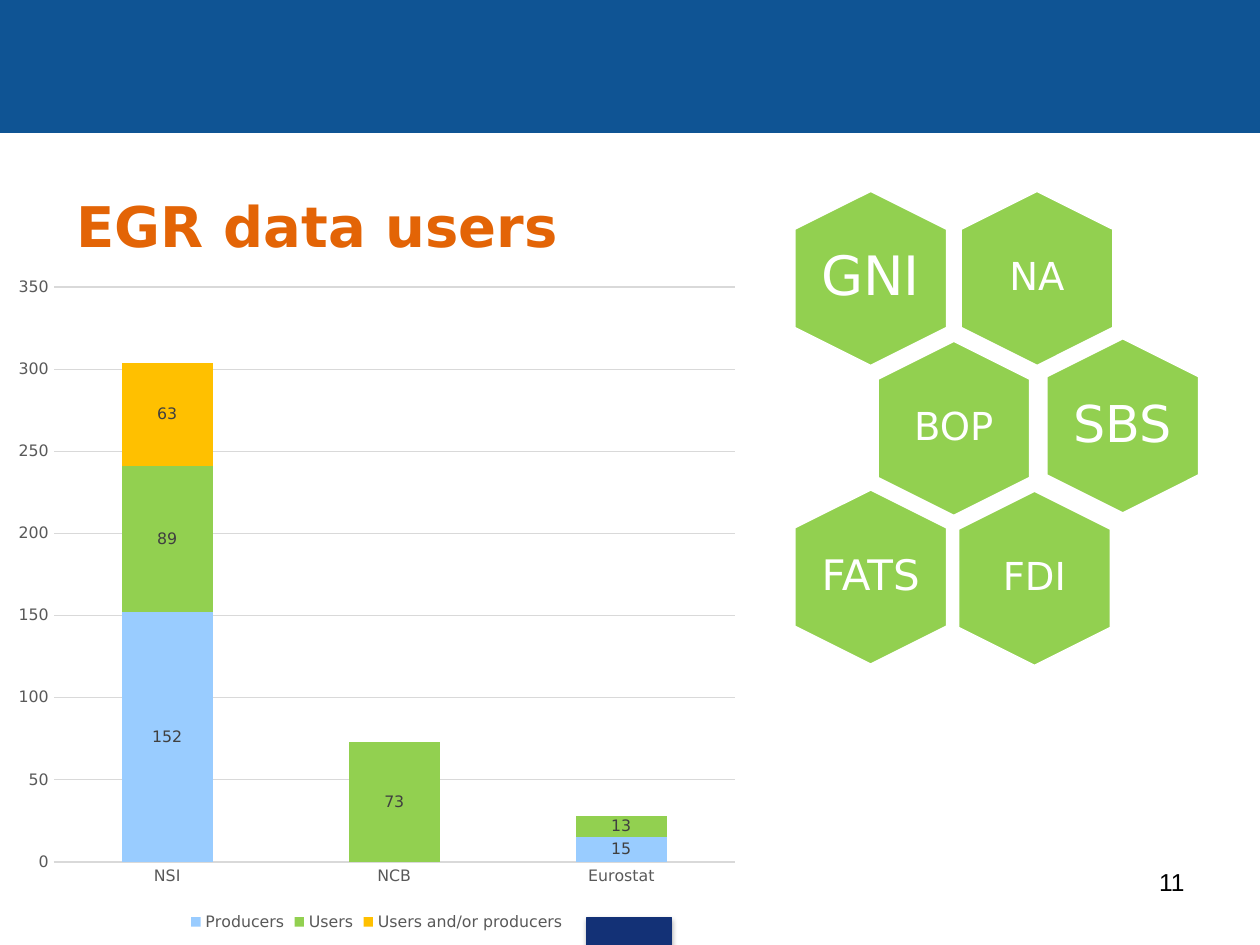
from pptx import Presentation
from pptx.chart.data import CategoryChartData
from pptx.dml.color import RGBColor
from pptx.enum.chart import (XL_CHART_TYPE, XL_LABEL_POSITION,
                             XL_LEGEND_POSITION, XL_TICK_MARK)
from pptx.enum.shapes import MSO_SHAPE
from pptx.enum.text import MSO_ANCHOR, PP_ALIGN
from pptx.oxml import parse_xml
from pptx.oxml.ns import nsdecls
from pptx.util import Inches, Pt

# Content
TITLE = "EGR data users"
PAGE = "11"
CATS = ["NSI", "NCB", "Eurostat"]
SERIES = [
    ("Producers", [152, None, 15], "sky"),
    ("Users", [89, 73, 13], "green"),
    ("Users and/or producers", [63, None, None], "gold"),
]
# Text, size, column, row, small nudge in inches
CELLS = [
    ("NA", 22, 1, 0, (0, 0)),
    ("GNI", 31, 0, 0, (0, 0)),
    ("BOP", 22, 0.5, 1, (0, 0)),
    ("SBS", 29, 1.5, 1, (0.02, -0.02)),
    ("FDI", 22, 1, 2, (-0.02, 0)),
    ("FATS", 24, 0, 2, (0, -0.01)),
]
HEX = {"left": 6.21, "top": 1.6, "dx": 1.32, "dy": 1.19, "w": 1.4, "h": 1.22}
LABEL = (0.84, 0.96)

COLORS = {
    "band": "0F5494", "navy": "133176", "orange": "E36406",
    "sky": "99CCFF", "green": "92D050", "gold": "FFC000",
    "grid": "D9D9D9", "gray": "595959", "dark": "404040",
    "white": "FFFFFF", "black": "000000",
}
FONT = "DejaVu Sans"
WIDE, HIGH = 10, 7.5


def rgb(name):
    return RGBColor.from_string(COLORS[name])


def style(font, size, color, face=FONT, bold=False):
    font.size, font.name, font.bold = Pt(size), face, bold
    font.color.rgb = rgb(color)


def rule(line, color, width=0.75):
    line.color.rgb = rgb(color)
    line.width = Pt(width)


def shape(home, kind, box, fill, edge, width=0.75):
    item = home.add_shape(kind, *map(Inches, box))
    item.shadow.inherit = False
    item.fill.solid()
    item.fill.fore_color.rgb = rgb(fill)
    rule(item.line, edge, width)
    return item


def write(home, box, text, size, color, face=FONT, bold=False,
          align=PP_ALIGN.LEFT, anchor=MSO_ANCHOR.MIDDLE,
          inset=(0.1, 0.05), space=None, indent=0):
    frame = home.add_textbox(*map(Inches, box)).text_frame
    frame.word_wrap = True
    frame.vertical_anchor = anchor
    frame.margin_left = frame.margin_right = Inches(inset[0])
    frame.margin_top = frame.margin_bottom = Inches(inset[1])
    para = frame.paragraphs[0]
    para.alignment, para.line_spacing = align, space
    if indent:
        para._p.get_or_add_pPr().set("marL", str(Inches(indent)))
    run = para.add_run()
    run.text = text
    style(run.font, size, color, face, bold)


deck = Presentation()
deck.slide_width, deck.slide_height = Inches(WIDE), Inches(HIGH)
slide = deck.slides.add_slide(deck.slide_layouts[6])
parts = slide.shapes

# Top band and foot tab
shape(parts, MSO_SHAPE.RECTANGLE, (0, 0, WIDE, 0.14 * HIGH), "band", "band")
tab = shape(parts, MSO_SHAPE.RECTANGLE, (4.66, 7.28, 0.67, 0.22), "navy", "navy")
glow = tab._element.spPr.find("{*}effectLst")
glow.append(parse_xml(
    f'<a:outerShdw {nsdecls("a")} blurRad="{Pt(3.1)}" dist="{Pt(1.8)}" '
    'dir="5400000" rotWithShape="0"><a:srgbClr val="000000">'
    '<a:alpha val="35000"/></a:srgbClr></a:outerShdw>'))

# Title and page number
write(parts, (0.12, 1.31, 9.76, 1.02), TITLE, 32, "orange", bold=True,
      space=0.9, indent=0.39)
write(parts, (7.17, 6.83, 2.33, 0.52), PAGE, 14, "black", face="Arial",
      align=PP_ALIGN.RIGHT, anchor=MSO_ANCHOR.TOP)

# Stacked columns
data = CategoryChartData()
data.categories = CATS
for name, vals, _ in SERIES:
    data.add_series(name, vals)
chart = parts.add_chart(XL_CHART_TYPE.COLUMN_STACKED,
                        *map(Inches, (0.03, 2.1, 5.92, 5.33)), data).chart
style(chart.font, 10, "black")
chart.has_title = False
chart.has_legend = True
chart.legend.position = XL_LEGEND_POSITION.BOTTOM
chart.legend.include_in_layout = False
style(chart.legend.font, 9, "gray")

cat, val = chart.category_axis, chart.value_axis
for axis in (cat, val):
    axis.major_tick_mark = axis.minor_tick_mark = XL_TICK_MARK.NONE
    style(axis.tick_labels.font, 9, "gray")
rule(cat.format.line, "grid")
val.format.line.fill.background()
val.minimum_scale, val.maximum_scale, val.major_unit = 0, 350, 50
rule(val.major_gridlines.format.line, "grid")

plot = chart.plots[0]
plot.gap_width, plot.overlap, plot.vary_by_categories = 150, 100, False
for bar, (_, _, color) in zip(plot.series, SERIES):
    bar.format.fill.solid()
    bar.format.fill.fore_color.rgb = rgb(color)
    tags = bar.data_labels
    tags.show_value = True
    tags.position = XL_LABEL_POSITION.CENTER
    style(tags.font, 9, "dark")

# Honeycomb of statistics
comb = parts.add_group_shape().shapes
wide, high = HEX["w"], HEX["h"]
for text, size, col, row, (nx, ny) in CELLS:
    x = HEX["left"] + col * HEX["dx"] + nx
    y = HEX["top"] + row * HEX["dy"] + ny
    cell = shape(comb, MSO_SHAPE.HEXAGON, (x, y, wide, high),
                 "green", "white", 2)
    cell.adjustments[0] = 0.25
    cell.rotation = 90
    box = (x + (wide - LABEL[0]) / 2, y + (high - LABEL[1]) / 2, *LABEL)
    write(comb, box, text, size, "white", align=PP_ALIGN.CENTER,
          inset=(0, 0), space=0.9)

deck.save("out.pptx")
